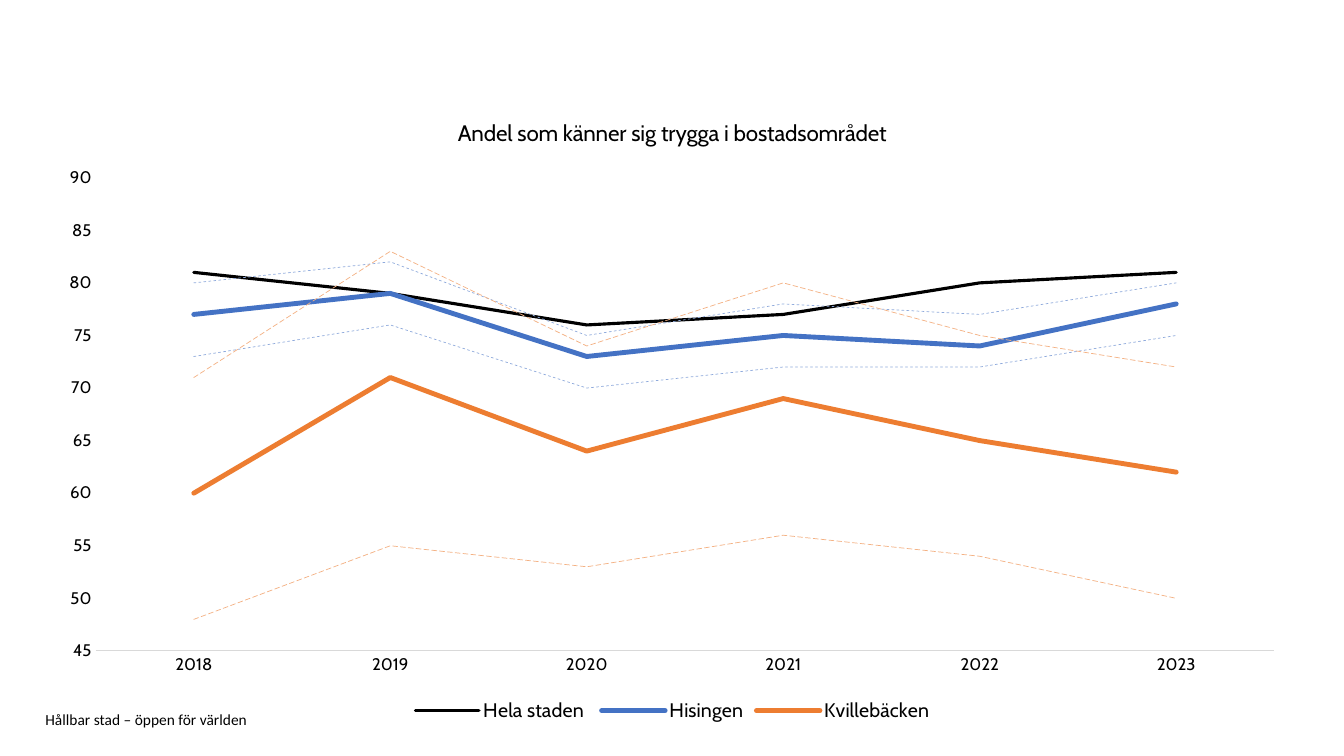
from lxml import etree
from pptx import Presentation
from pptx import util as u
from pptx.chart import data
from pptx.dml.color import RGBColor
from pptx.enum import chart as kinds, dml, text
from pptx.oxml import ns

PX = 9144  # one hundredth of an inch
COLORS = {
    "ink": "000000", "axis": "D9D9D9",
    "blue": "4472C4", "pale blue": "8FAADC",
    "orange": "ED7D31", "pale orange": "F4B183",
}
DASH, LONG = dml.MSO_LINE.DASH, dml.MSO_LINE.LONG_DASH
YEARS = ["2018", "2019", "2020", "2021", "2022", "2023"]
# name, values, colour, line width, dash; the dashed lines are interval bounds
LINES = [
    ("Hela staden ", (81, 79, 76, 77, 80, 81), "ink", 2.25, None),
    ("Hisingen", (77, 79, 73, 75, 74, 78), "blue", 3.5, None),
    ("Series 3", (73, 76, 70, 72, 72, 75), "pale blue", 0.5, DASH),
    ("Series 4", (80, 82, 75, 78, 77, 80), "pale blue", 0.5, DASH),
    ("Kvillebäcken", (60, 71, 64, 69, 65, 62), "orange", 3.5, None),
    ("Series 6", (48, 55, 53, 56, 54, 50), "pale orange", 0.5, LONG),
    ("Series 7", (71, 83, 74, 80, 75, 72), "pale orange", 0.5, LONG),
]


def rgb(name):
    return RGBColor.from_string(COLORS[name])


def style(font, size, face="Cabin", color="ink"):
    font.size, font.name, font.bold = u.Pt(size), face, False
    font.color.rgb = rgb(color)


def write(frame, words, **form):
    frame.text = words
    style(frame.paragraphs[0].runs[0].font, **form)


def node(tag, **attrs):
    return etree.Element(ns.qn(tag), attrs)


class Deck:
    def __init__(self, wide, high):
        self.prs = Presentation()
        self.prs.slide_width, self.prs.slide_height = wide * PX, high * PX
        self.slide = self.prs.slides.add_slide(self.prs.slide_layouts[6])

    def label(self, words, box, **form):
        frame = self.slide.shapes.add_textbox(*(n * PX for n in box)).text_frame
        frame.word_wrap = True
        frame.vertical_anchor = text.MSO_ANCHOR.MIDDLE
        frame.margin_left = frame.margin_right = 0
        frame.margin_top = frame.margin_bottom = 0
        write(frame, words, **form)

    def graph(self, title, box, low, high):
        table = data.CategoryChartData(number_format="0")
        table.categories = YEARS
        for name, values, *_ in LINES:
            table.add_series(name, values)
        chart = self.slide.shapes.add_chart(
            kinds.XL_CHART_TYPE.LINE, *(n * PX for n in box), table).chart
        style(chart.font, 12)
        chart.has_title = True
        write(chart.chart_title.text_frame, title, size=16)
        chart.chart_title.include_in_layout = False
        self.axes(chart, low, high)
        self.lines(chart.plots[0])
        self.legend(chart)
        self.place(chart, x=0.04, y=0.13, w=0.94, h=0.75)

    def axes(self, chart, low, high):
        years, share = chart.category_axis, chart.value_axis
        for axis in (years, share):
            axis.has_major_gridlines = False
            axis.major_tick_mark = kinds.XL_TICK_MARK.NONE
            axis.minor_tick_mark = kinds.XL_TICK_MARK.NONE
        years.format.line.color.rgb = rgb("axis")
        years.format.line.width = u.Pt(0.75)
        share.format.line.fill.background()
        share.minimum_scale, share.maximum_scale = low, high
        share.major_unit = 5
        share.tick_labels.number_format = "0"
        share.tick_labels.number_format_is_linked = False

    def lines(self, plot):
        plot.vary_by_categories = False
        for series, (_, _, color, width, dash) in zip(plot.series, LINES):
            series.smooth = False
            series.marker.style = kinds.XL_MARKER_STYLE.NONE
            line = series.format.line
            line.color.rgb, line.width = rgb(color), u.Pt(width)
            if dash:
                line.dash_style = dash
            series.format.line._get_or_add_ln().set("cap", "rnd")

    def legend(self, chart):
        """Show the legend below, without the dashed bounds."""
        chart.has_legend = True
        legend = chart.legend
        legend.position = kinds.XL_LEGEND_POSITION.BOTTOM
        legend.include_in_layout = False
        style(legend.font, 14)
        spot = legend._element.find(ns.qn("c:legendPos"))
        hidden = [i for i, line in enumerate(LINES) if line[-1]]
        for index in reversed(hidden):
            entry = node("c:legendEntry")
            entry.append(node("c:idx", val=str(index)))
            entry.append(node("c:delete", val="1"))
            spot.addnext(entry)

    def place(self, chart, **parts):
        """Fix the inner plot area as fractions of the chart."""
        area = chart._chartSpace.chart.plotArea
        for old in area.findall(ns.qn("c:layout")):
            area.remove(old)
        layout, manual = node("c:layout"), node("c:manualLayout")
        manual.append(node("c:layoutTarget", val="inner"))
        for side in "xy":
            manual.append(node(f"c:{side}Mode", val="edge"))
        for side, part in parts.items():
            manual.append(node(f"c:{side}", val=str(part)))
        layout.append(manual)
        area.insert(0, layout)


def main():
    deck = Deck(1333, 750)
    deck.label("Hållbar stad – öppen för världen", (45, 706, 945, 16),
               size=11, face="Calibri")
    deck.graph("Andel som känner sig trygga i bostadsområdet",
               (45, 95, 1244, 626), low=45, high=90)
    deck.prs.save("out.pptx")


if __name__ == "__main__":
    main()
